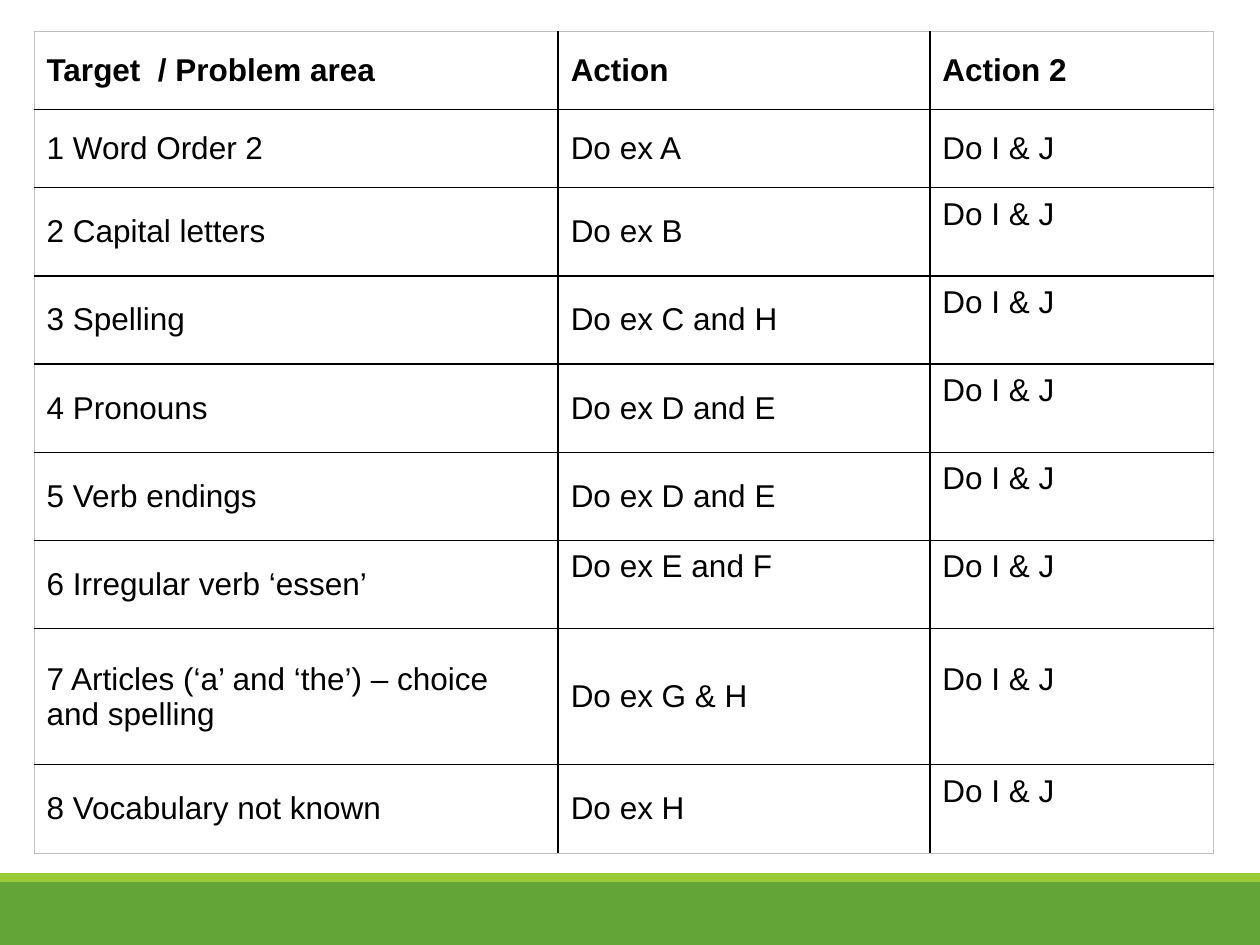
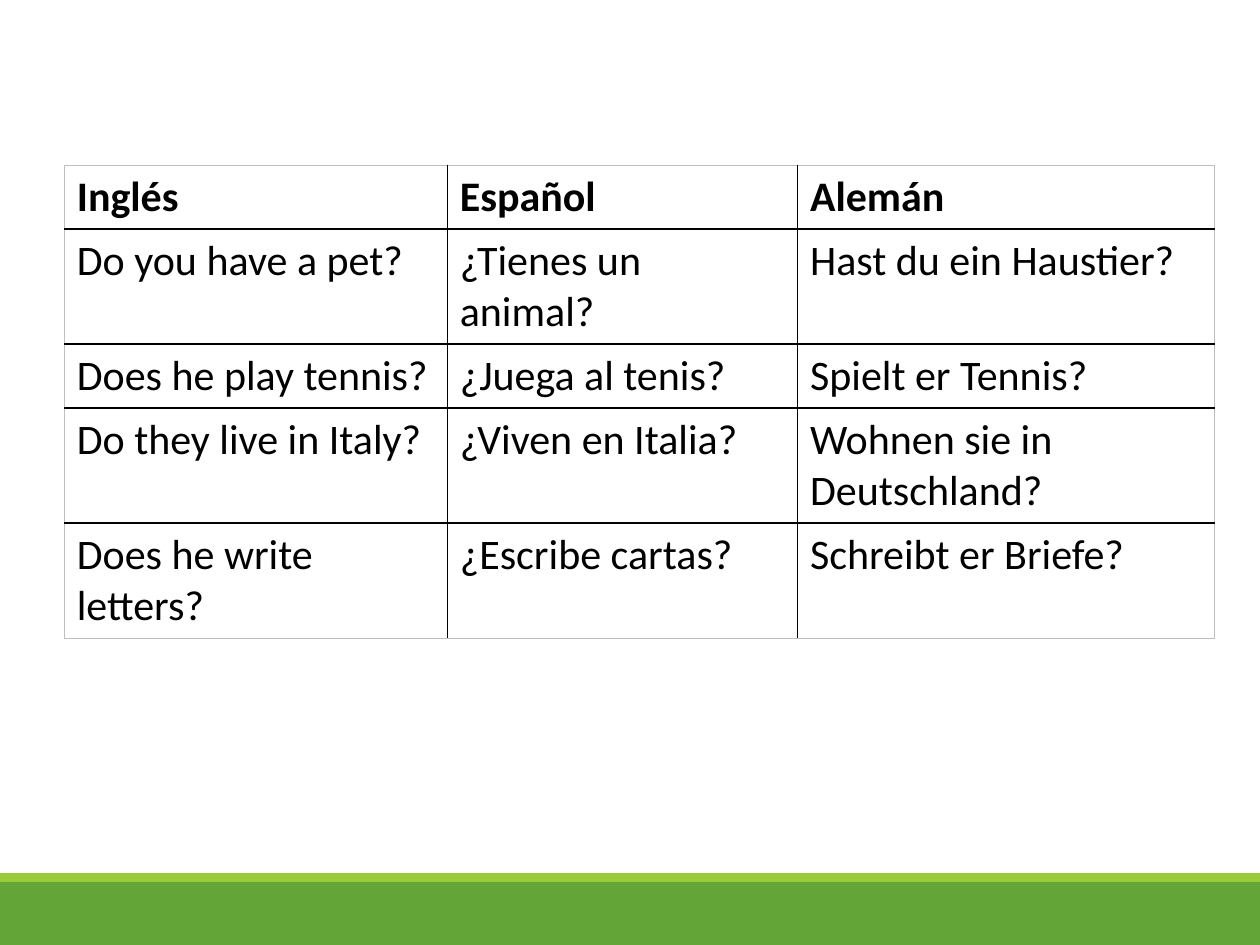
"""Build two language-lesson slides: a table of targets and a table of questions."""
from lxml.etree import SubElement
from pptx import Presentation
from pptx.dml.color import RGBColor
from pptx.enum.shapes import MSO_SHAPE
from pptx.enum.text import MSO_ANCHOR
from pptx.oxml.ns import qn
from pptx.util import Inches, Pt

COLORS = {"green": "63A537", "lime": "99CB38", "white": "FFFFFF",
          "text": "000000", "grid": "000000", "frame": "BFBFBF"}
BANDS = [("green", 7, 0.5), ("lime", 6.93, 0.07)]

TARGETS = {
    "at": (0.27, 0.25),
    "cols": [4.16, 2.95, 2.25],
    "rows": [0.62] * 2 + [0.7] * 5 + [1.08, 0.7],
    "font": {"name": "Arial", "size": Pt(18)},
    "anchor": MSO_ANCHOR.MIDDLE,
    "raised": {(r, 2) for r in range(2, 9)} | {(6, 1)},
    "cells": [
        ("Target  / Problem area", "Action", "Action 2"),
        ("1 Word Order 2", "Do ex A", "Do I & J"),
        ("2 Capital letters", "Do ex B", "Do I & J"),
        ("3 Spelling", "Do ex C and H", "Do I & J"),
        ("4 Pronouns", "Do ex D and E", "Do I & J"),
        ("5 Verb endings", "Do ex D and E", "Do I & J"),
        ("6 Irregular verb ‘essen’", "Do ex E and F", "Do I & J"),
        ("7 Articles (‘a’ and ‘the’) – choice and spelling", "Do ex G & H", "Do I & J"),
        ("8 Vocabulary not known", "Do ex H", "Do I & J"),
    ],
}
QUESTIONS = {
    "at": (0.51, 1.31),
    "cols": [3.04, 2.78, 3.31],
    "rows": [0.5, 0.9, 0.5, 0.9, 0.9],
    "font": {"name": "Calibri", "size": Pt(24)},
    "anchor": MSO_ANCHOR.TOP,
    "raised": set(),
    "cells": [
        ("Inglés", "Español", "Alemán"),
        ("Do you have a pet?", "¿Tienes un animal?", "Hast du ein Haustier?"),
        ("Does he play tennis?", "¿Juega al tenis?", "Spielt er Tennis?"),
        ("Do they live in Italy?", "¿Viven en Italia?", "Wohnen sie in Deutschland?"),
        ("Does he write letters?", "¿Escribe cartas?", "Schreibt er Briefe?"),
    ],
}


def rgb(name):
    """Return a named colour."""
    return RGBColor.from_string(COLORS[name])


def add_bands(s):
    """Draw the green footer bands."""
    for color, top, height in BANDS:
        sp = s.shapes.add_shape(MSO_SHAPE.RECTANGLE, 0, Inches(top), Inches(10), Inches(height))
        sp.shadow.inherit = False
        sp.fill.solid()
        sp.fill.fore_color.rgb = rgb(color)
        sp.line.fill.background()


def set_borders(cell, outer):
    """Line each side: pale on the outer frame, black inside."""
    tc_pr = cell._tc.get_or_add_tcPr()
    for i, (side, is_outer) in enumerate(outer.items()):
        ln = tc_pr.makeelement(qn("a:" + side), {"w": str(Pt(0.5 if is_outer else 1))})
        tc_pr.insert(i, ln)
        fill = SubElement(ln, qn("a:solidFill"))
        SubElement(fill, qn("a:srgbClr"), val=COLORS["frame" if is_outer else "grid"])


def add_grid(s, data):
    """Add a table with a bold heading row."""
    rows, cols = data["rows"], data["cols"]
    left, top = data["at"]
    table = s.shapes.add_table(len(rows), len(cols), Inches(left), Inches(top),
                               Inches(sum(cols)), Inches(sum(rows))).table
    table.first_row = table.horz_banding = False
    for col, width in zip(table.columns, cols):
        col.width = Inches(width)
    for row, height in zip(table.rows, rows):
        row.height = Inches(height)
    for r, texts in enumerate(data["cells"]):
        for c, text in enumerate(texts):
            cell = table.cell(r, c)
            cell.fill.solid()
            cell.fill.fore_color.rgb = rgb("white")
            cell.vertical_anchor = data["anchor"]
            cell.margin_left = cell.margin_right = Inches(0.1)
            cell.margin_top = Inches(0.05)
            cell.margin_bottom = Inches(0.33 if (r, c) in data["raised"] else 0.05)
            run = cell.text_frame.paragraphs[0].add_run()
            run.text = text
            for key, value in {**data["font"], "bold": r == 0}.items():
                setattr(run.font, key, value)
            run.font.color.rgb = rgb("text")
            set_borders(cell, {"lnL": c == 0, "lnR": c == len(cols) - 1,
                               "lnT": r == 0, "lnB": r == len(rows) - 1})


def main():
    """Build and save the slides."""
    prs = Presentation()
    prs.slide_width, prs.slide_height = Inches(10), Inches(7.5)
    for data in (TARGETS, QUESTIONS):
        s = prs.slides.add_slide(prs.slide_layouts[6])
        add_bands(s)
        add_grid(s, data)
    prs.save("out.pptx")


if __name__ == "__main__":
    main()
